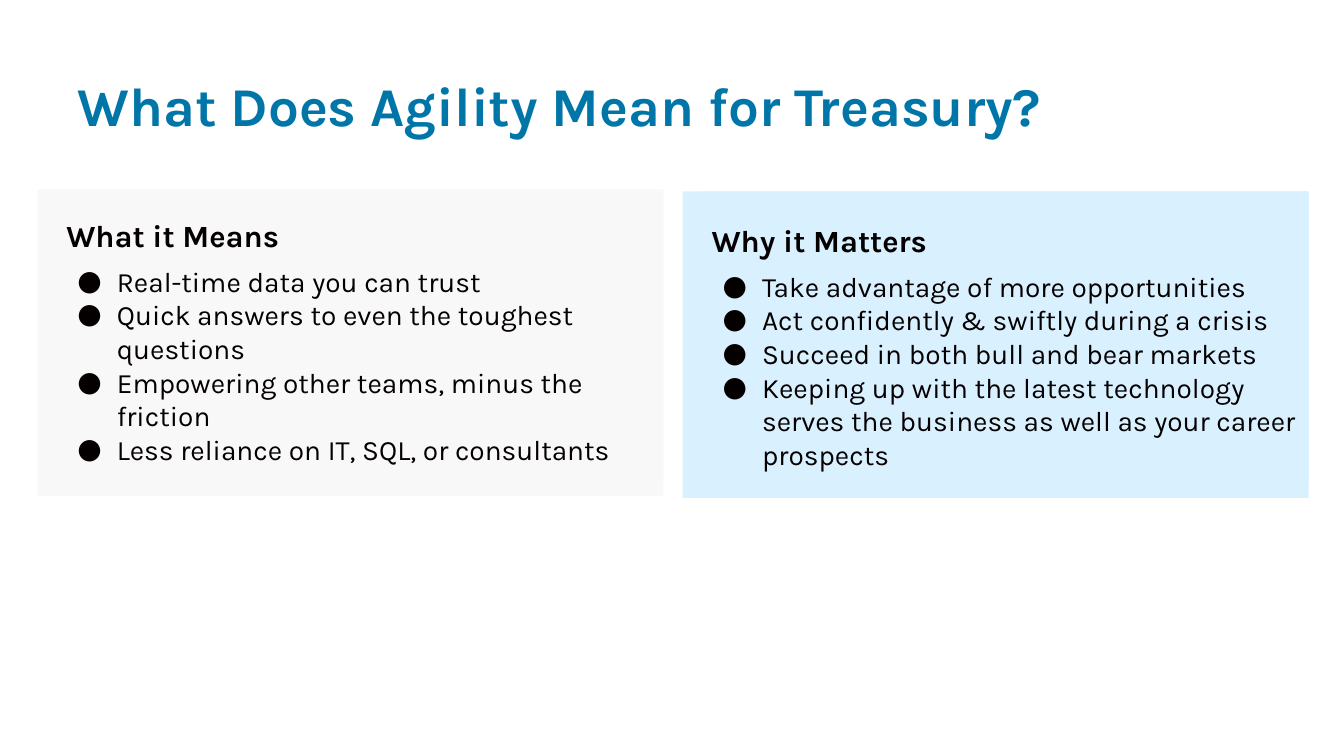
"""Build the slide on what agility means for treasury."""
from lxml.etree import SubElement
from pptx import Presentation
from pptx.dml.color import RGBColor as RGB
from pptx.enum.shapes import MSO_SHAPE as SHAPE
from pptx.enum.text import MSO_ANCHOR as ANCHOR, PP_ALIGN as ALIGN
from pptx.oxml.ns import qn
from pptx.util import Pt

PX = 9144
THEME = {
    "font": "Karla",
    "title": {"size": 39, "color": "0076A8", "bold": True},
    "heading": {"size": 22, "color": "050000", "bold": True},
    "bullet": {"size": 20, "color": "050000", "bold": False},
    "gray": "F8F8F8",
    "blue": "D9F0FF",
    "gap": 7.6,
}
PANELS = [
    {"left": 37, "top": 188, "text_height": 285, "inset": 25, "fill": "gray",
     "heading": "What it Means",
     "bullets": ["Real-time data you can trust",
                 "Quick answers to even the toughest questions",
                 "Empowering other teams, minus the friction",
                 "Less reliance on IT, SQL, or consultants"]},
    {"left": 677, "top": 190, "text_height": 290, "inset": 30, "fill": "blue",
     "heading": "Why it Matters",
     "bullets": ["Take advantage of more opportunities",
                 "Act confidently & swiftly during a crisis",
                 "Succeed in both bull and bear markets",
                 "Keeping up with the latest technology serves the business "
                 "as well as your career prospects"]},
]
PANEL_W, PANEL_H, TEXT_W, TEXT_TOP = 621, 304, 602, 190


def write(p, text, style):
    p.alignment = ALIGN.LEFT
    r = p.add_run()
    r.text = text
    look = THEME[style]
    for name, value in {"name": THEME["font"], "size": Pt(look["size"]),
                        "bold": look["bold"]}.items():
        setattr(r.font, name, value)
    r.font.color.rgb = RGB.from_string(look["color"])


def add_box(s, left, top, width, height, fill):
    sp = s.shapes.add_shape(SHAPE.RECTANGLE, left * PX, top * PX, width * PX, height * PX)
    sp.shadow.inherit = False
    sp.fill.solid()
    sp.fill.fore_color.rgb = RGB.from_string(THEME[fill])
    sp.line.fill.background()
    return sp


prs = Presentation()
prs.slide_width, prs.slide_height = 1333 * PX, 750 * PX
s = prs.slides.add_slide(prs.slide_layouts[5])

title = s.shapes.title
for name, value in {"left": 67, "top": 41, "width": 1200, "height": 125}.items():
    setattr(title, name, value * PX)
title.text_frame.vertical_anchor = ANCHOR.MIDDLE
write(title.text_frame.paragraphs[0], "What Does Agility Mean for Treasury?", "title")

for panel in PANELS:
    left, fill = panel["left"], panel["fill"]
    add_box(s, left, panel["top"], PANEL_W, PANEL_H, fill)
    sp = add_box(s, left + PANEL_W - TEXT_W, TEXT_TOP, TEXT_W, panel["text_height"], fill)
    tf = sp.text_frame
    for name, value in {"word_wrap": True, "vertical_anchor": ANCHOR.TOP,
                        "margin_left": 10 * PX, "margin_right": 10 * PX,
                        "margin_top": panel["inset"] * PX,
                        "margin_bottom": 10 * PX}.items():
        setattr(tf, name, value)
    write(tf.paragraphs[0], panel["heading"], "heading")
    for i, text in enumerate(panel["bullets"]):
        p = tf.add_paragraph()
        pPr = p._p.get_or_add_pPr()
        pPr.set("marL", str(50 * PX))
        pPr.set("indent", str(-39 * PX))
        color = SubElement(pPr, qn("a:buClr"))
        SubElement(color, qn("a:srgbClr"), val=THEME["bullet"]["color"])
        SubElement(pPr, qn("a:buFont"), typeface=THEME["font"])
        SubElement(pPr, qn("a:buChar"), char="●")
        p.space_before = Pt(0 if i else THEME["gap"])
        write(p, text, "bullet")

prs.save("out.pptx")
